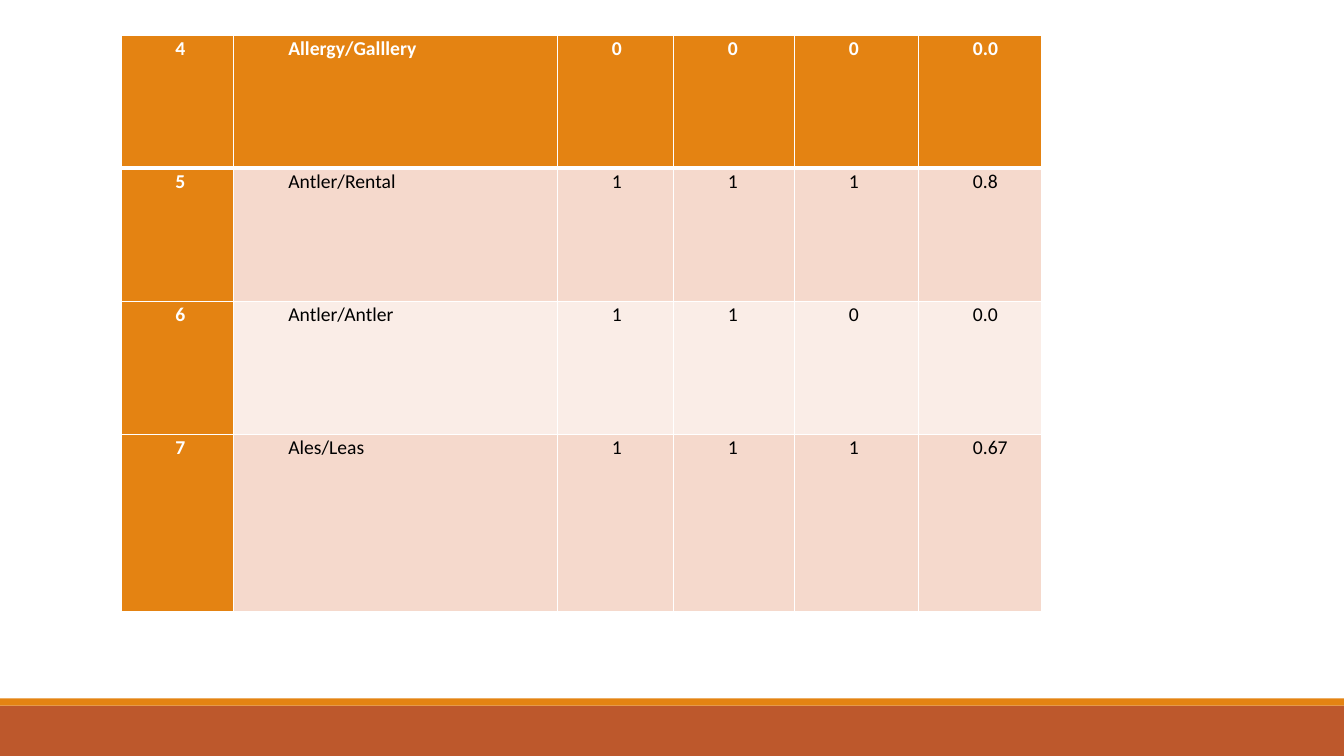
import pptx
import pptx.util
import pptx.dml.color
import pptx.enum.shapes
import pptx.enum.text
import pptx.oxml
import pptx.oxml.ns

Inches = pptx.util.Inches
RGBColor = pptx.dml.color.RGBColor

WHITE = RGBColor(0xFF, 0xFF, 0xFF)
BLACK = RGBColor(0x00, 0x00, 0x00)
ORANGE = RGBColor(0xE4, 0x83, 0x12)
RUST = RGBColor(0xBD, 0x58, 0x2C)
DARK_BAND = RGBColor(0xF5, 0xD9, 0xCC)
LIGHT_BAND = RGBColor(0xFA, 0xED, 0xE7)

COLUMN_WIDTHS = [1.12, 3.21, 1.15, 1.2, 1.23, 1.22]
ROW_HEIGHTS = [1.32, 1.32, 1.32, 1.76]
ROWS = [
    ["4", "Allergy/Galllery", "0", "0", "0", "0.0"],
    ["5", "Antler/Rental", "1", "1", "1", "0.8"],
    ["6", "Antler/Antler", "1", "1", "0", "0.0"],
    ["7", "Ales/Leas", "1", "1", "1", "0.67"],
]


def add_border(cell, side, points):
    line = pptx.oxml.parse_xml(
        f'<a:ln{side} {pptx.oxml.ns.nsdecls("a")} w="{pptx.util.Pt(points)}">'
        f'<a:solidFill><a:srgbClr val="{WHITE}"/></a:solidFill></a:ln{side}>'
    )
    cell._tc.get_or_add_tcPr().append(line)


presentation = pptx.Presentation()
presentation.slide_width = Inches(13.33)
presentation.slide_height = Inches(7.5)
slide = presentation.slides.add_slide(presentation.slide_layouts[6])

# Footer bands
for top, height, color in [(7, 0.5, RUST), (6.93, 0.07, ORANGE)]:
    band = slide.shapes.add_shape(
        pptx.enum.shapes.MSO_SHAPE.RECTANGLE,
        0, Inches(top), presentation.slide_width, Inches(height),
    )
    band.shadow.inherit = False
    band.fill.solid()
    band.fill.fore_color.rgb = color
    band.line.fill.background()

# Table grid
table = slide.shapes.add_table(
    len(ROWS), len(COLUMN_WIDTHS), Inches(1.2), Inches(0.35),
    Inches(sum(COLUMN_WIDTHS)), Inches(sum(ROW_HEIGHTS)),
).table
table.first_col = True
for column, width in zip(table.columns, COLUMN_WIDTHS):
    column.width = Inches(width)
for row, height in zip(table.rows, ROW_HEIGHTS):
    row.height = Inches(height)

# Table cells: orange first row and column, banded body
for row_index, values in enumerate(ROWS):
    for column_index, value in enumerate(values):
        cell = table.cell(row_index, column_index)
        is_header = row_index == 0 or column_index == 0
        cell.margin_left = cell.margin_right = Inches(0.04)
        cell.margin_top = cell.margin_bottom = 0

        add_border(cell, "L", 1)
        add_border(cell, "R", 1)
        add_border(cell, "T", 3 if row_index == 1 else 1)
        add_border(cell, "B", 3 if row_index == 0 else 1)

        body_color = DARK_BAND if row_index % 2 else LIGHT_BAND
        cell.fill.solid()
        cell.fill.fore_color.rgb = ORANGE if is_header else body_color

        cell.text = value
        paragraph = cell.text_frame.paragraphs[0]
        paragraph.alignment = pptx.enum.text.PP_ALIGN.JUSTIFY
        paragraph.line_spacing = 1.07
        paragraph._p.get_or_add_pPr().set("marL", str(Inches(0.5)))
        paragraph.font.name = "Calibri"
        paragraph.font.size = pptx.util.Pt(14)
        paragraph.font.bold = is_header
        paragraph.font.color.rgb = WHITE if is_header else BLACK

presentation.save("out.pptx")
